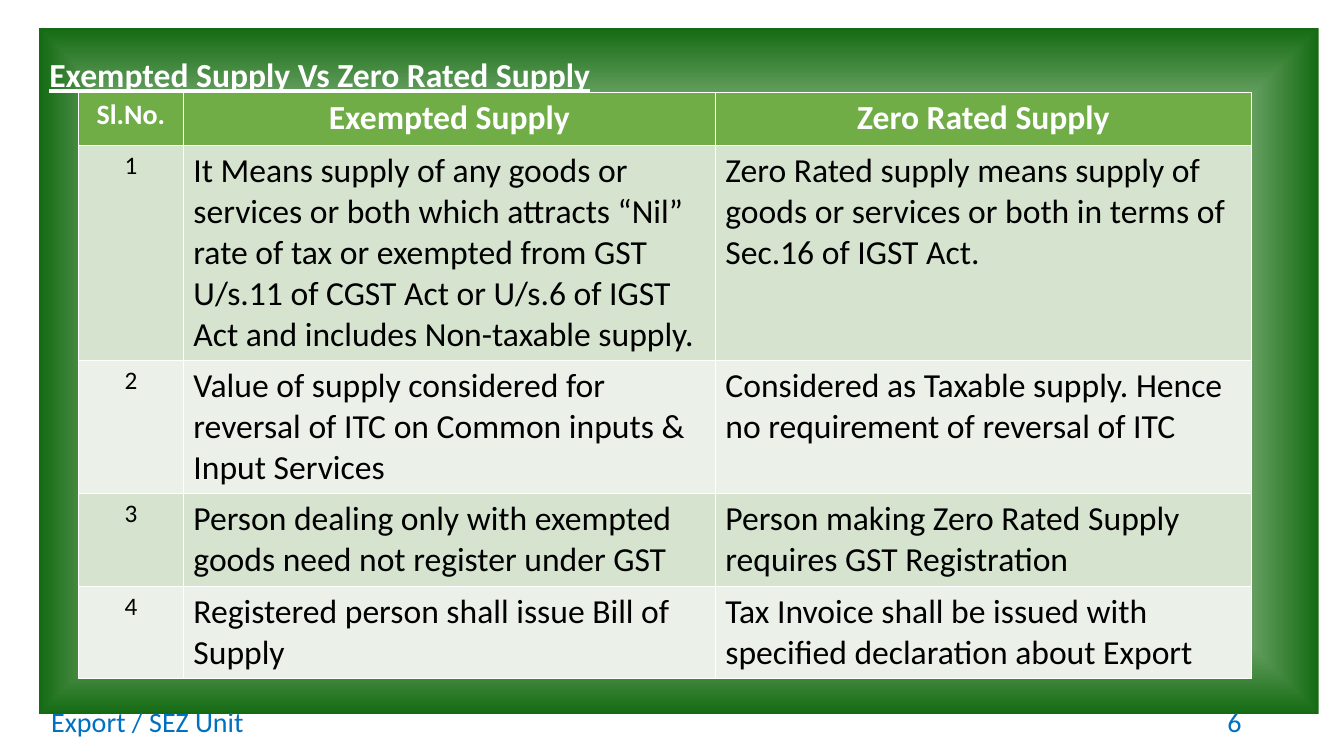
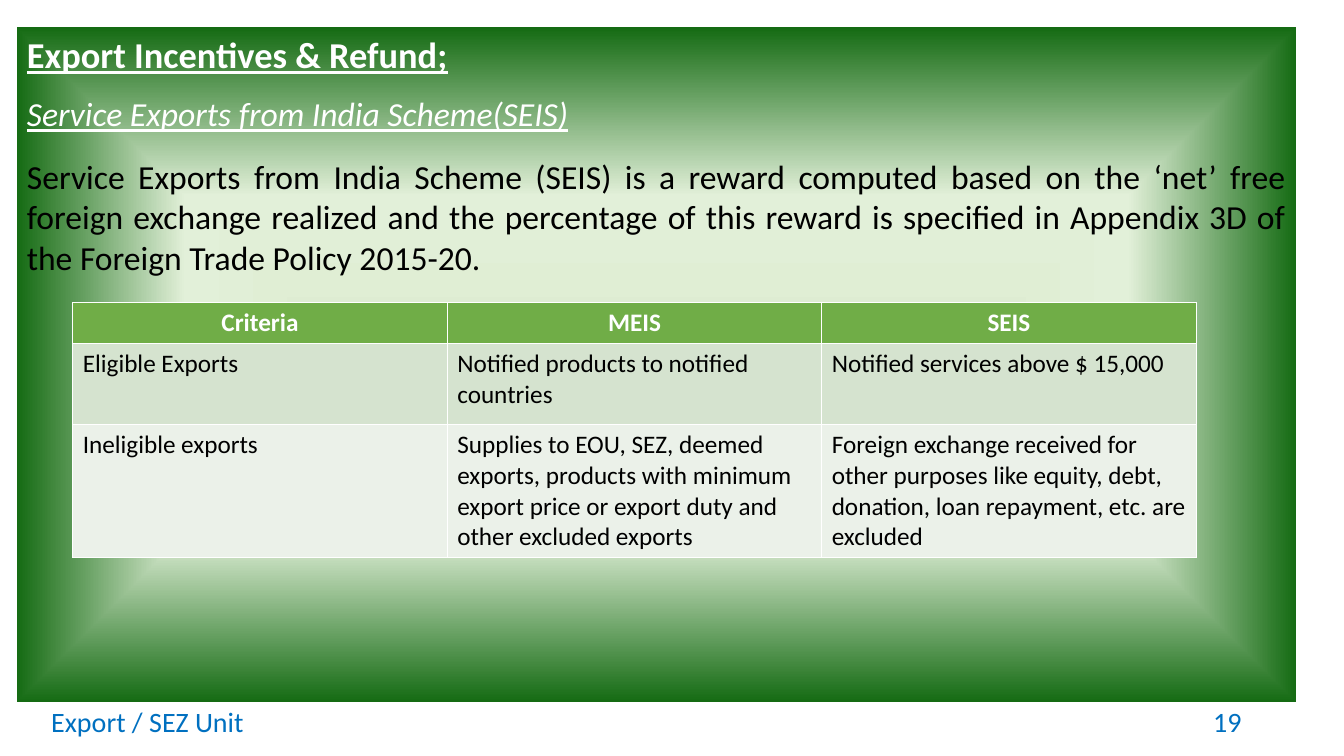
"""Builds two slides on export supplies and incentives under GST."""
from pptx import Presentation
from pptx.dml.color import RGBColor
from pptx.enum.shapes import MSO_SHAPE as Form
from pptx.enum.text import MSO_ANCHOR as Anchor, MSO_AUTO_SIZE as Fit, PP_ALIGN as Align
from pptx.oxml import parse_xml
from pptx.oxml.ns import nsdecls
from pptx.util import Pt

FONT = "Calibri"
HEX = {
    "white": "FFFFFF", "black": "000000", "blue": "0070C0", "head": "70AD47",
    "odd": "D5E3CF", "even": "EBF1E9",
    "core": "DDEBCF", "mid": "E2F0D9", "edge": "156B13",
}
FOOT = "Export / SEZ Unit"
SLIDES = [
    {
        "layout": 5, "page": "6", "panel": (28, 20, 914, 490),
        "title": "Exempted Supply Vs Zero Rated Supply", "size": 24, "top": 35,
        "body": [],
        "at": (56, 66), "cols": (75, 380, 383), "rows": (38, 153, 95, 66, 66),
        "heads": (20, 24, 24), "sizes": (18, 24, 24), "mid": (0,),
        "cells": [
            ("Sl.No.", "Exempted Supply", "Zero Rated Supply"),
            ("1", "It Means supply of any goods or services or both which attracts “Nil” rate of tax "
                  "or exempted from GST U/s.11 of CGST Act or U/s.6 of IGST Act and includes "
                  "Non-taxable supply.",
             "Zero Rated supply means supply of goods or services or both in terms of "
             "Sec.16 of IGST Act."),
            ("2", "Value of supply considered for reversal of ITC on Common inputs & Input Services",
             "Considered as Taxable supply. Hence no requirement of reversal of ITC"),
            ("3", "Person dealing only with exempted goods need not register under GST",
             "Person making Zero Rated Supply requires GST Registration"),
            ("4", "Registered person shall issue Bill of Supply",
             "Tax Invoice shall be issued with specified declaration about Export"),
        ],
    },
    {
        "layout": 1, "page": "19", "panel": (12, 19.5, 914, 482),
        "title": "Export Incentives & Refund;", "size": 26, "top": 19.5,
        "body": [
            ("Service Exports from India Scheme(SEIS)", "white", True, 0),
            ("Service Exports from India Scheme (SEIS) is a reward computed based on the ‘net’ free "
             "foreign exchange realized and the percentage of this reward is specified in "
             "Appendix 3D of the Foreign Trade Policy 2015-20.", "black", False, 16),
        ],
        "at": (52, 216), "cols": (267.5,) * 3, "rows": (29, 58, 95),
        "heads": (18,) * 3, "sizes": (18,) * 3, "mid": (),
        "cells": [
            ("Criteria", "MEIS", "SEIS"),
            ("Eligible Exports", "Notified products to notified countries",
             "Notified services above $ 15,000"),
            ("Ineligible exports",
             "Supplies to EOU, SEZ, deemed exports, products with minimum export price or "
             "export duty and other excluded exports",
             "Foreign exchange received for other purposes like equity, debt, donation, "
             "loan repayment, etc. are excluded"),
        ],
    },
]


def style(para, size, color, align=Align.LEFT, bold=False, italic=False, line=False):
    para.alignment = align
    for run in para.runs:
        font = run.font
        font.name, font.size = FONT, Pt(size)
        font.bold, font.italic, font.underline = bold, italic, line
        font.color.rgb = RGBColor.from_string(HEX[color])


def place(shape, left, top, width, height):
    shape.left, shape.top, shape.width, shape.height = map(Pt, (left, top, width, height))
    frame = shape.text_frame
    frame.word_wrap, frame.auto_size = True, Fit.NONE
    frame.vertical_anchor = Anchor.TOP
    return frame


def add_panel(slide, box):
    panel = slide.shapes.add_shape(Form.RECTANGLE, *map(Pt, box))
    panel.shadow.inherit = False
    panel.line.fill.background()
    panel.fill.background()
    stops = "".join(
        f'<a:gs pos="{pos}"><a:srgbClr val="{HEX[name]}"/></a:gs>'
        for pos, name in ((0, "core"), (50000, "mid"), (100000, "edge")))
    grad = parse_xml(
        f'<a:gradFill {nsdecls("a")} rotWithShape="1"><a:gsLst>{stops}</a:gsLst>'
        '<a:path path="shape"><a:fillToRect l="50000" t="50000" r="50000" b="50000"/>'
        '</a:path></a:gradFill>')
    props = panel._element.spPr
    props.replace(props.find("{*}noFill"), grad)
    slide.shapes._spTree.insert(2, panel._element)


def add_body(slide, items, left, top, width):
    frame = place(slide.placeholders[1], left, top, width, 145)
    for i, (text, color, accent, gap) in enumerate(items):
        para = frame.paragraphs[0] if i == 0 else frame.add_paragraph()
        para.text = text
        props = para._p.get_or_add_pPr()
        props.set("marL", "0")
        props.set("indent", "0")
        props.append(parse_xml(f'<a:buNone {nsdecls("a")}/>'))
        para.space_before = Pt(gap)
        style(para, 24, color, Align.JUSTIFY, italic=accent, line=accent)


def add_grid(slide, data):
    cols, rows, cells = data["cols"], data["rows"], data["cells"]
    box = (*data["at"], sum(cols), sum(rows))
    grid = slide.shapes.add_table(len(rows), len(cols), *map(Pt, box)).table
    for col, width in zip(grid.columns, cols):
        col.width = Pt(width)
    for r, (row, height) in enumerate(zip(grid.rows, rows)):
        row.height = Pt(height)
        head = r == 0
        fill = "head" if head else "odd" if r % 2 else "even"
        for c, cell in enumerate(row.cells):
            cell.text_frame.text = cells[r][c]
            cell.fill.solid()
            cell.fill.fore_color.rgb = RGBColor.from_string(HEX[fill])
            style(cell.text_frame.paragraphs[0], data["heads" if head else "sizes"][c],
                  "white" if head else "black",
                  Align.CENTER if head or c in data["mid"] else Align.LEFT, bold=head)


def add_foot(slide, page):
    for text, left, width, align in ((FOOT, 29.5, 324, Align.LEFT), (page, 678, 216, Align.RIGHT)):
        box = slide.shapes.add_textbox(0, 0, 0, 0)
        frame = place(box, left, 500.5, width, 29)
        frame.vertical_anchor = Anchor.MIDDLE
        frame.text = text
        style(frame.paragraphs[0], 20, "blue", align)


def main():
    deck = Presentation()
    deck.slide_width, deck.slide_height = Pt(960), Pt(540)
    for data in SLIDES:
        slide = deck.slides.add_slide(deck.slide_layouts[data["layout"]])
        left, _, width, _ = data["panel"]
        add_panel(slide, data["panel"])
        frame = place(slide.shapes.title, left, data["top"], width, 40)
        frame.text = data["title"]
        style(frame.paragraphs[0], data["size"], "white", bold=True, line=True)
        if data["body"]:
            add_body(slide, data["body"], left, data["top"] + 43.5, width)
        add_grid(slide, data)
        add_foot(slide, data["page"])
    deck.save("out.pptx")


if __name__ == "__main__":
    main()
